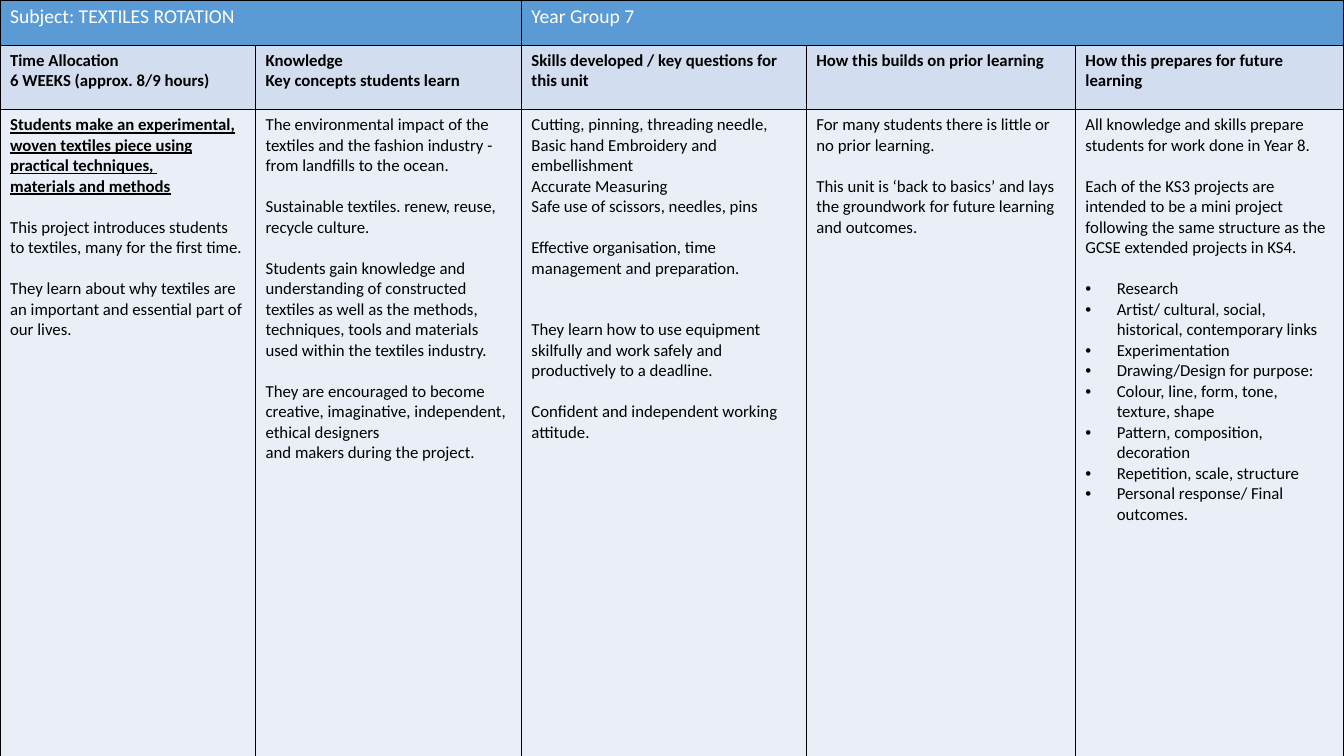
from pptx import Presentation, util as u
from pptx.dml import color
from pptx.oxml import ns
from lxml import etree

FONT = "Calibri"
LINE_PITCH = 14.65
COLUMN_WIDTHS = [6.44, 6.7, 7.18, 6.78, 6.77]
ROW_HEIGHTS = [1.14, 1.63, 16.33]
BANNERS = [(0, 1, "Subject: TEXTILES ROTATION"), (2, 4, "Year Group 7")]
HEADINGS = [
    ["Time Allocation ", "6 WEEKS (approx. 8/9 hours)"],
    ["Knowledge", "Key concepts students learn"],
    ["Skills developed / key questions for this unit"],
    ["How this builds on prior learning"],
    ["How this prepares for future learning"],
]
# Each entry: blank lines above, look, text
DETAILS = [
    [
        (0, "title", "Students make an experimental, woven textiles piece using practical techniques, "),
        (0, "title", "materials and methods"),
        (1, "plain", "This project introduces students to textiles, many for the first time. "),
        (1, "plain", "They learn about why textiles are an important and essential part of our lives. "),
    ],
    [
        (0, "plain", "The environmental impact of the textiles and the fashion industry - from landfills to the ocean. "),
        (1, "plain", "Sustainable textiles. renew, reuse, recycle culture."),
        (1, "plain", "Students gain knowledge and understanding of constructed textiles as well as "
                     "the methods, techniques, tools and materials used within the textiles industry. "),
        (1, "plain", "They are encouraged to become creative, imaginative, independent, ethical designers "),
        (0, "plain", "and makers during the project. "),
    ],
    [
        (0, "plain", "Cutting, pinning, threading needle, "),
        (0, "plain", "Basic hand Embroidery and embellishment"),
        (0, "plain", "Accurate Measuring"),
        (0, "plain", "Safe use of scissors, needles, pins"),
        (1, "plain", "Effective organisation, time management and preparation."),
        (2, "plain", "They learn how to use equipment skilfully and work safely and productively to a deadline."),
        (1, "plain", "Confident and independent working attitude."),
    ],
    [
        (0, "plain", "For many students there is little or no prior learning."),
        (1, "plain", "This unit is ‘back to basics’ and lays the groundwork for future learning and outcomes."),
    ],
    [
        (0, "plain", "All knowledge and skills prepare students for work done in Year 8."),
        (1, "plain", "Each of the KS3 projects are intended to be a mini project following "
                     "the same structure as the GCSE extended projects in KS4."),
        (1, "bullet", "Research"),
        (0, "bullet", "Artist/ cultural, social, historical, contemporary links"),
        (0, "bullet", "Experimentation "),
        (0, "bullet", "Drawing/Design for purpose: "),
        (0, "bullet", "Colour, line, form, tone, texture, shape"),
        (0, "bullet", "Pattern, composition, decoration"),
        (0, "bullet", "Repetition, scale, structure"),
        (0, "bullet", "Personal response/ Final outcomes."),
    ],
]


def rgb(value):
    """Turn a hex string into a colour."""
    return color.RGBColor.from_string(value)


def style_cell(cell, fill):
    """Give a cell thin black borders and a solid fill."""
    properties = cell._tc.get_or_add_tcPr()
    for side in ("a:lnL", "a:lnR", "a:lnT", "a:lnB"):
        line = etree.SubElement(properties, ns.qn(side), w=str(u.Pt(1)))
        solid = etree.SubElement(line, ns.qn("a:solidFill"))
        etree.SubElement(solid, ns.qn("a:srgbClr"), val="000000")
    cell.fill.solid()
    cell.fill.fore_color.rgb = rgb(fill)


def add_bullet(paragraph):
    """Put a round bullet with a hanging indent on a paragraph."""
    properties = paragraph._p.get_or_add_pPr()
    indent = u.Cm(0.79)
    properties.set("marL", str(indent))
    properties.set("indent", str(-indent))
    etree.SubElement(properties, ns.qn("a:buFont"), typeface="Arial")
    etree.SubElement(properties, ns.qn("a:buChar"), char="•")


def write_cell(cell, entries, size=12, ink="000000"):
    """Fill a cell with paragraphs of (blank lines above, look, text)."""
    frame = cell.text_frame
    for index, (blank_lines, look, content) in enumerate(entries):
        paragraph = frame.add_paragraph() if index else frame.paragraphs[0]
        if blank_lines:
            paragraph.space_before = u.Pt(blank_lines * LINE_PITCH)
        if look == "bullet":
            add_bullet(paragraph)
        run = paragraph.add_run()
        run.text = content
        run.font.name = FONT
        run.font.size = u.Pt(size)
        run.font.bold = look in ("title", "heading")
        run.font.underline = look == "title"
        run.font.color.rgb = rgb(ink)


def add_unit_table(slide, left, top, width, height):
    """Place the curriculum table in the given box."""
    table = slide.shapes.add_table(3, 5, left, top, width, height).table
    table.first_row = table.horz_banding = False
    for column, column_width in zip(table.columns, COLUMN_WIDTHS):
        column.width = u.Cm(column_width)
    for row, row_height, fill in zip(table.rows, ROW_HEIGHTS, ("5B9BD5", "D2DEEF", "EAEFF7")):
        row.height = u.Cm(row_height)
        for cell in row.cells:
            style_cell(cell, fill)
    for first, last, label in BANNERS:
        table.cell(0, first).merge(table.cell(0, last))
        write_cell(table.cell(0, first), [(0, "plain", label)], 14, "FFFFFF")
    for index, (heading, details) in enumerate(zip(HEADINGS, DETAILS)):
        write_cell(table.cell(1, index), [(0, "heading", line) for line in heading])
        write_cell(table.cell(2, index), details)


def main():
    """Build and save the presentation."""
    presentation = Presentation()
    presentation.slide_width = u.Cm(33.87)
    presentation.slide_height = u.Cm(19.05)
    slide = presentation.slides.add_slide(presentation.slide_layouts[6])
    add_unit_table(slide, 0, 0, u.Cm(sum(COLUMN_WIDTHS)), u.Cm(sum(ROW_HEIGHTS)))
    presentation.save("out.pptx")


if __name__ == "__main__":
    main()
